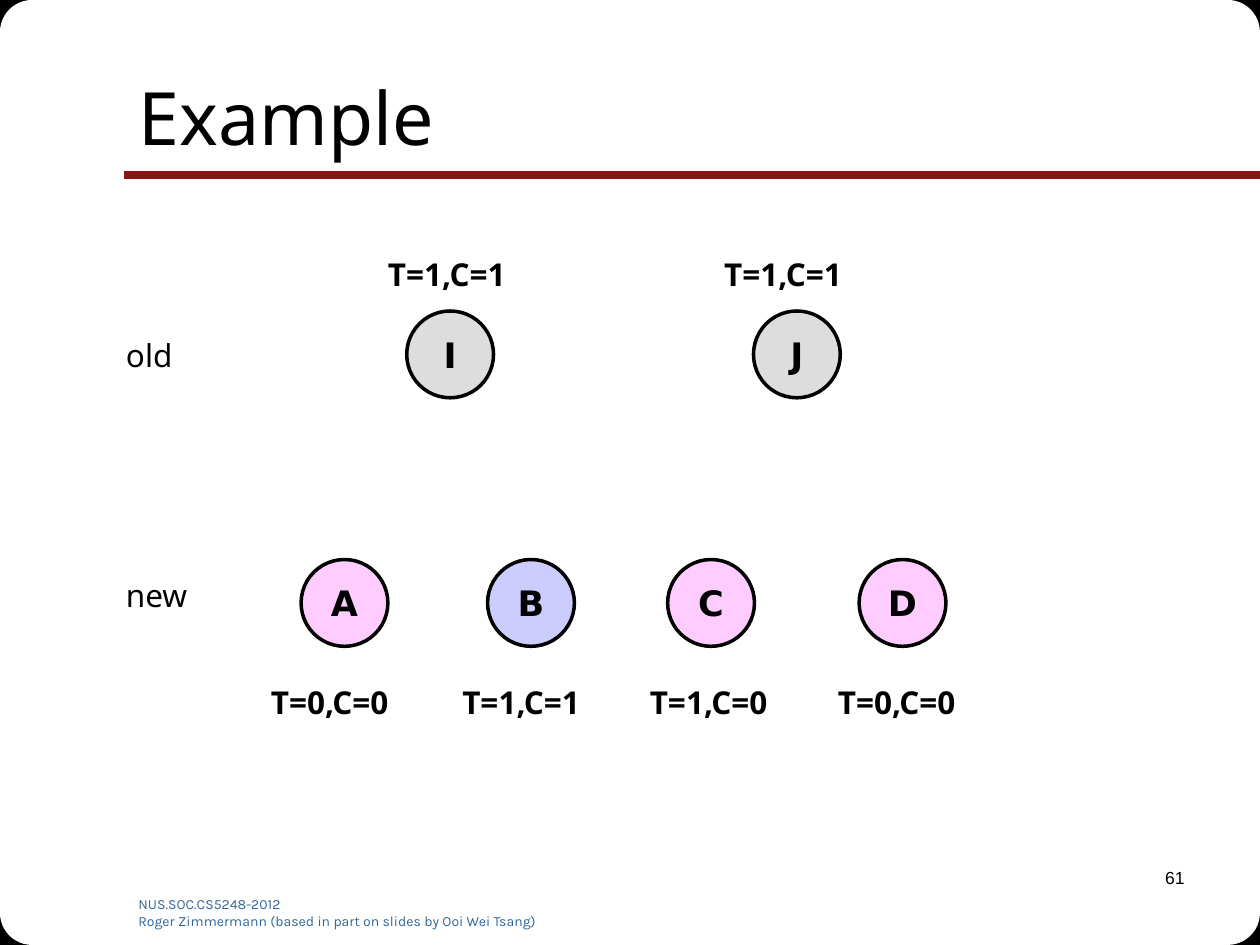
import pptx
import pptx.util
import pptx.dml.color
import pptx.enum.shapes
import pptx.enum.text
import pptx.oxml.ns
import lxml.etree

Cm = pptx.util.Cm
Pt = pptx.util.Pt
RGBColor = pptx.dml.color.RGBColor
SHAPE = pptx.enum.shapes.MSO_SHAPE
ALIGN = pptx.enum.text.PP_ALIGN
ANCHOR = pptx.enum.text.MSO_ANCHOR
FIT = pptx.enum.text.MSO_AUTO_SIZE

BLACK = RGBColor(0x00, 0x00, 0x00)
WHITE = RGBColor(0xFF, 0xFF, 0xFF)
RED = RGBColor(0x89, 0x14, 0x11)
BLUE = RGBColor(0x33, 0x66, 0x99)
GRAY = RGBColor(0xDD, 0xDD, 0xDD)
PINK = RGBColor(0xFF, 0xCC, 0xFF)
LILAC = RGBColor(0xCC, 0xCC, 0xFF)

WIDTH, HEIGHT = 25.4, 19.05
NODE = 1.75
LABEL_WIDTH, LABEL_HEIGHT = 3.18, 1.02


def set_font(p, name, size, color=BLACK, bold=False):
    p.font.name = name
    p.font.size = Pt(size)
    p.font.color.rgb = color
    p.font.bold = bold


def add_shape(s, kind, box, fill, line=None, weight=0.75):
    sp = s.shapes.add_shape(kind, *map(Cm, box))
    sp.shadow.inherit = False
    sp.fill.solid()
    sp.fill.fore_color.rgb = fill
    if line is None:
        sp.line.fill.background()
    else:
        sp.line.color.rgb = line
        sp.line.width = Pt(weight)
    return sp


def add_text(s, box, lines, name, size, color=BLACK, bold=False, align=ALIGN.LEFT,
             anchor=ANCHOR.TOP, wrap=True):
    tf = s.shapes.add_textbox(*map(Cm, box)).text_frame
    tf.word_wrap = wrap
    tf.auto_size = FIT.NONE if wrap else FIT.SHAPE_TO_FIT_TEXT
    tf.vertical_anchor = anchor
    for i, line in enumerate(lines):
        p = tf.add_paragraph() if i else tf.paragraphs[0]
        p.text = line
        p.alignment = align
        set_font(p, name, size, color, bold)


def add_frame(s, left, top, width, height):
    for kind, size, fill, line in (
        (SHAPE.RECTANGLE, 1.1, BLACK, BLACK),
        (SHAPE.ROUNDED_RECTANGLE, 3.89, WHITE, None),
    ):
        for x in (left, left + width - size):
            for y in (top, top + height - size):
                add_shape(s, kind, (x, y, size, size), fill, line)


def add_header(s, left, top, width, height, title):
    add_text(s, (left + 0.05, top, 21.59, height), [title], "Noto Sans", 42,
             anchor=ANCHOR.MIDDLE)
    y = Cm(top + 2.77)
    rule = s.shapes.add_connector(pptx.enum.shapes.MSO_CONNECTOR.STRAIGHT,
                                  Cm(left), y, Cm(left + width), y)
    rule.line.color.rgb = RED
    rule.line.width = Pt(4.5)
    lxml.etree.SubElement(rule._element.spPr, pptx.oxml.ns.qn("a:effectLst"))


def add_footer(s, left, top, width, height, credits, number):
    add_text(s, (left, top + 0.58, 9.32, 0.71), credits, "Karla", 8, BLUE)
    add_text(s, (left + width - 5.28, top, 5.28, height), [number], "Arial", 10,
             align=ALIGN.RIGHT)


def add_node(s, left, top, letter, fill):
    sp = add_shape(s, SHAPE.OVAL, (left, top, NODE, NODE), fill, BLACK, 2)
    tf = sp.text_frame
    tf.word_wrap = False
    tf.vertical_anchor = ANCHOR.MIDDLE
    p = tf.paragraphs[0]
    p.text = letter
    p.alignment = ALIGN.CENTER
    set_font(p, "DejaVu Sans", 20, bold=True)


def add_row(s, left, top, name, name_width, name_dy, label_dy, nodes):
    add_text(s, (left, top + name_dy, name_width, LABEL_HEIGHT), [name],
             "Noto Sans", 18, wrap=False)
    for letter, fill, node_dx, label, label_dx in nodes:
        add_node(s, left + node_dx, top, letter, fill)
        add_text(s, (left + label_dx, top + label_dy, LABEL_WIDTH, LABEL_HEIGHT),
                 [label], "Noto Sans", 18, bold=True, wrap=False)


def main():
    prs = pptx.Presentation()
    prs.slide_width = Cm(WIDTH)
    prs.slide_height = Cm(HEIGHT)
    s = prs.slides.add_slide(prs.slide_layouts[6])
    add_frame(s, 0, 0, WIDTH, HEIGHT)
    add_header(s, 2.49, 0.76, WIDTH - 2.49, 3.18, "Example")
    add_footer(s, 2.54, 17.35, 21.59, 1.27, [
        "NUS.SOC.CS5248-2012",
        "Roger Zimmermann (based in part on slides by Ooi Wei Tsang)",
    ], "61")
    add_row(s, 2.29, 6.27, "old", 1.5, 0.38, -1.25, [
        ("I", GRAY, 5.91, "T=1,C=1", 5.28),
        ("J", GRAY, 12.9, "T=1,C=1", 12.06),
    ])
    add_row(s, 2.29, 11.28, "new", 1.75, 0.2, 2.36, [
        ("A", PINK, 3.78, "T=0,C=0", 2.92),
        ("B", LILAC, 7.54, "T=1,C=1", 6.78),
        ("C", PINK, 11.17, "T=1,C=0", 10.56),
        ("D", PINK, 15.03, "T=0,C=0", 14.35),
    ])
    prs.save("out.pptx")


if __name__ == "__main__":
    main()
